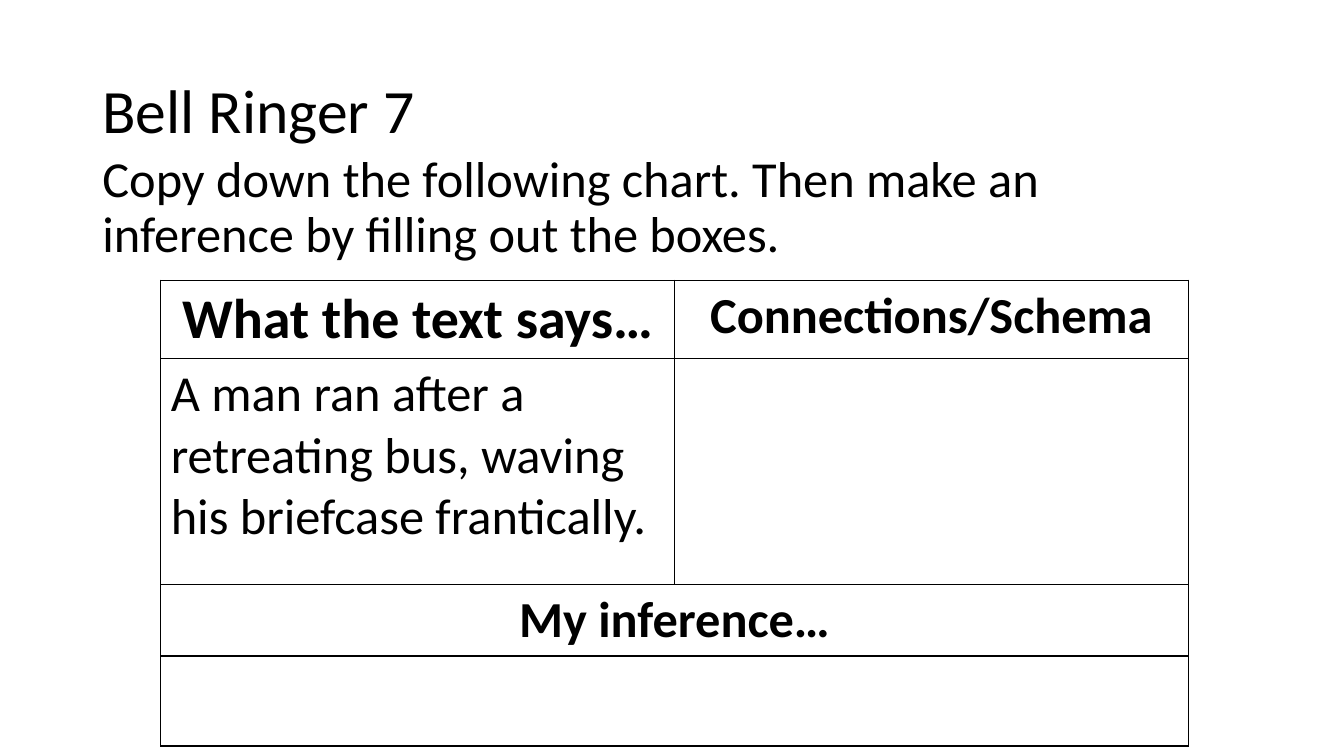
from pptx import Presentation
from pptx.dml.color import RGBColor
from pptx.enum.text import MSO_ANCHOR, PP_ALIGN
from pptx.oxml import parse_xml
from pptx.oxml.ns import nsdecls
from pptx.util import Cm, Pt

BLACK = "000000"


def format_text(p, size, bold=False, align=PP_ALIGN.LEFT):
    p.alignment = align
    p.font.name = "Calibri"
    p.font.size = Pt(size)
    p.font.bold = bold
    p.font.color.rgb = RGBColor.from_string(BLACK)


def add_borders(cell):
    tc_pr = cell._tc.get_or_add_tcPr()
    for side in "LRTB":
        tc_pr.append(parse_xml(
            f'<a:ln{side} {nsdecls("a")} w="{Pt(1)}"><a:solidFill>'
            f'<a:srgbClr val="{BLACK}"/></a:solidFill></a:ln{side}>'))


prs = Presentation()
prs.slide_width, prs.slide_height = Cm(33.87), Cm(19.05)
s = prs.slides.add_slide(prs.slide_layouts[5])

# Title
title = s.shapes.title
title.left, title.top, title.width, title.height = Cm(2.33), Cm(1.01), Cm(29.21), Cm(3.68)
title.text_frame.text = "Bell Ringer 7"
title.text_frame.vertical_anchor = MSO_ANCHOR.MIDDLE
p = title.text_frame.paragraphs[0]
format_text(p, 44)
p.line_spacing = 0.9

# Instructions
box = s.shapes.add_textbox(Cm(2.33), Cm(3.76), Cm(29.21), Cm(12.09))
tf = box.text_frame
tf.word_wrap = True
tf.text = "Copy down the following chart. Then make an inference by filling out the boxes."
p = tf.paragraphs[0]
format_text(p, 36)
p.line_spacing = 0.9
p.space_before = Pt(10)

# Inference chart
row_heights = [1.97, 5.69, 1.81, 2.27]
frame = s.shapes.add_table(4, 2, Cm(4.05), Cm(7.06), Cm(25.9), Cm(sum(row_heights)))
table = frame.table
table.first_row = table.horz_banding = False
for column in table.columns:
    column.width = Cm(12.95)
for row, height in zip(table.rows, row_heights):
    row.height = Cm(height)
for cell in table.iter_cells():
    add_borders(cell)
    cell.fill.background()
for row in (2, 3):
    table.cell(row, 0).merge(table.cell(row, 1))

# Cell wording: row, column, text, size, bold, alignment
entries = [
    (0, 0, "What the text says…", 40, True, PP_ALIGN.CENTER),
    (0, 1, "Connections/Schema", 36, True, PP_ALIGN.CENTER),
    (1, 0, "A man ran after a retreating bus, waving his briefcase frantically.",
     36, False, PP_ALIGN.LEFT),
    (2, 0, "My inference…", 36, True, PP_ALIGN.CENTER),
]
for row, col, text, size, bold, align in entries:
    tf = table.cell(row, col).text_frame
    tf.text = text
    format_text(tf.paragraphs[0], size, bold, align)

prs.save("out.pptx")
